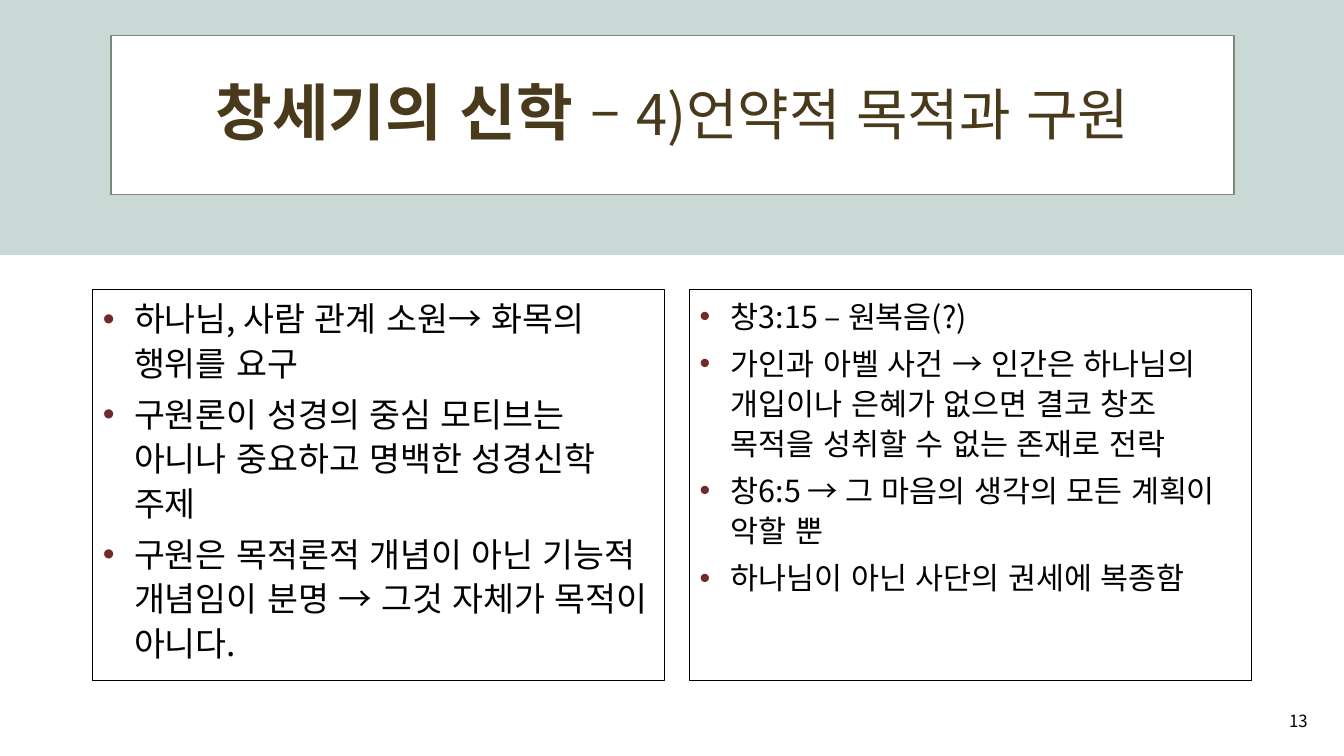
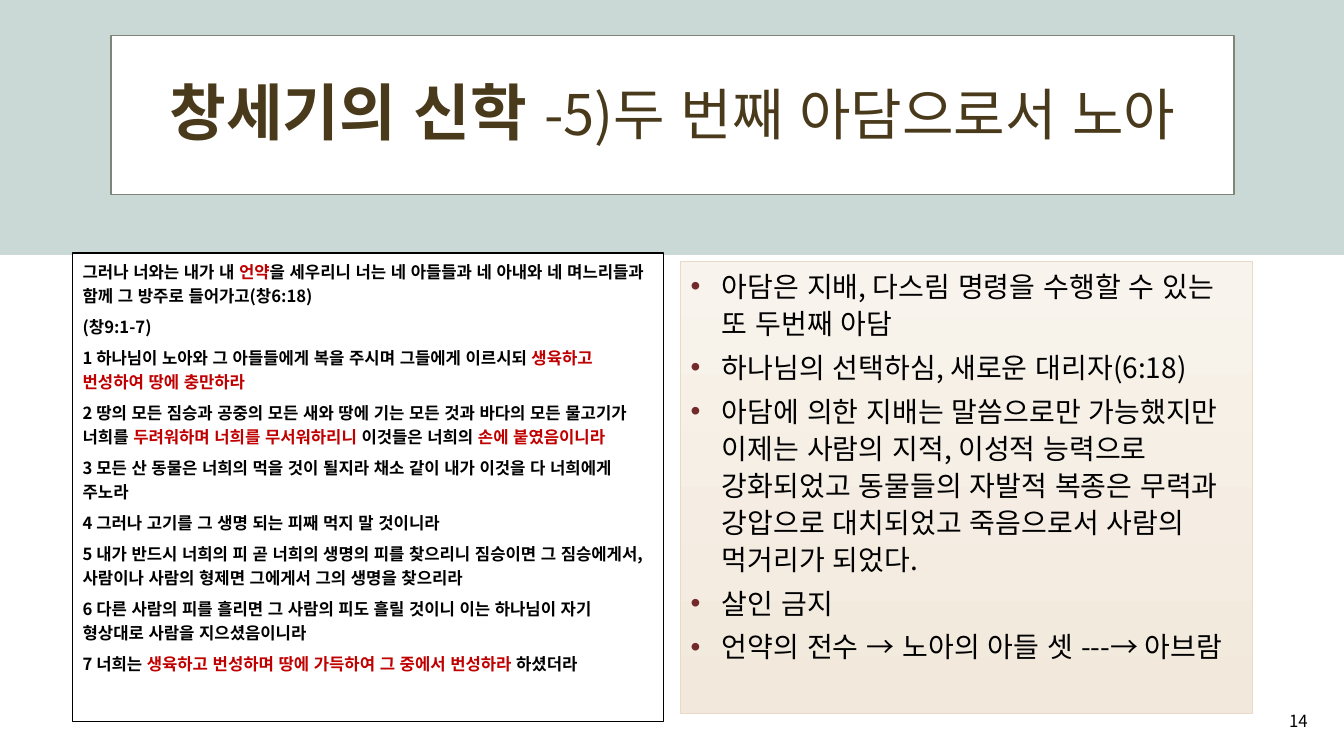
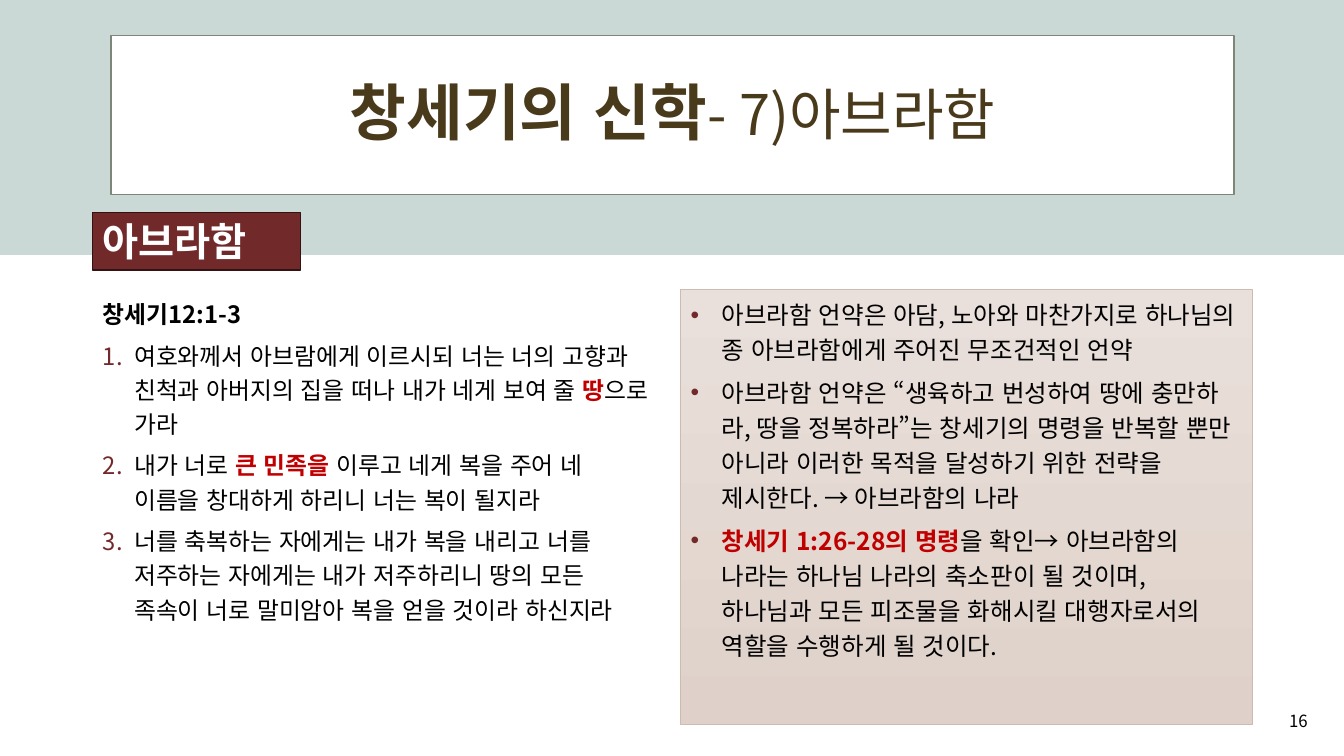
from dataclasses import dataclass, field

from lxml.etree import SubElement
from pptx import Presentation
from pptx.dml.color import RGBColor as Rgb
from pptx.enum.lang import MSO_LANGUAGE_ID as Lang
from pptx.enum.shapes import MSO_SHAPE as Kind
from pptx.enum.text import MSO_ANCHOR as Anchor, MSO_AUTO_SIZE as Fit, PP_ALIGN as Align
from pptx.oxml.ns import qn
from pptx.util import Inches, Pt


@dataclass(frozen=True)
class Theme:
    """Fonts, colours, type sizes and panel skins of the deck."""
    font: str = "Noto Sans CJK KR"
    latin: str = "Calibri"
    ink: str = "000000"
    white: str = "FFFFFF"
    brown: str = "4A3A1C"
    red: str = "C00000"
    wine: str = "72292A"
    mark: str = "73292A"
    edge: str = "321212"
    band: str = "CAD8D6"
    frame: str = "7E8679"
    head: float = 44
    sub: float = 40
    tag: float = 28
    page: float = 12
    skins: dict = field(default_factory=lambda: {
        "plain": (["FFFFFF"], "000000", 1),
        "sand": (["F8F3EC", "F2E9DC"], "E8DAC4", 0.5),
        "clay": (["E9E0DB", "DFD1C9"], "CEBBAF", 0.5),
    })


def apply(item, **opts):
    for name, value in opts.items():
        setattr(item, name, value)


class Deck:
    """Draws the elements of each slide in one style."""

    def __init__(self, theme):
        self.theme = theme
        self.prs = Presentation()
        apply(self.prs, slide_width=Inches(13.33), slide_height=Inches(7.5))
        self.plan = self.prs.slide_layouts[3]
        for old in list(self.plan.placeholders)[3:]:
            old.element.getparent().remove(old.element)
        self.slide = None

    def place(self, shape, at):
        names = ("left", "top", "width", "height")
        apply(shape, **{name: Inches(size) for name, size in zip(names, at)})

    def skin(self, shape, fills, edge=None, width=1):
        if len(fills) > 1:
            shape.fill.gradient()
            shape.fill.gradient_angle = 270
            for stop, tone in zip(shape.fill.gradient_stops, fills):
                stop.color.rgb = Rgb.from_string(tone)
        else:
            shape.fill.solid()
            shape.fill.fore_color.rgb = Rgb.from_string(fills[0])
        if edge:
            shape.line.color.rgb = Rgb.from_string(edge)
            shape.line.width = Pt(width)
        else:
            shape.line.fill.background()

    def rect(self, at, *skin):
        shape = self.slide.shapes.add_shape(Kind.RECTANGLE, *map(Inches, at))
        shape.shadow.inherit = False
        self.skin(shape, *skin)
        return shape

    def frame(self, shape, anchor):
        text = shape.text_frame
        apply(text, word_wrap=True, auto_size=Fit.NONE, vertical_anchor=anchor)
        return text

    def run(self, para, text, size, tone, bold=False, font=None):
        run = para.add_run()
        run.text = text
        apply(run.font, name=font or self.theme.font, size=Pt(size), bold=bold,
              language_id=Lang.KOREAN)
        run.font.color.rgb = Rgb.from_string(tone)
        SubElement(run.font._element, qn("a:ea"), typeface=self.theme.font)

    def bullet(self, para, mark):
        props = para._p.get_or_add_pPr()
        indent = Inches(0.31) if mark else 0
        props.set("marL", str(indent))
        props.set("indent", str(-indent))
        if not mark:
            SubElement(props, qn("a:buNone"))
            return
        tone = SubElement(props, qn("a:buClr"))
        SubElement(tone, qn("a:srgbClr"), val=self.theme.mark)
        if mark == "1.":
            SubElement(props, qn("a:buFont"), typeface=self.theme.font)
            SubElement(props, qn("a:buAutoNum"), type="arabicPeriod")
        else:
            SubElement(props, qn("a:buFont"), typeface="Arial")
            SubElement(props, qn("a:buChar"), char=mark)

    def start(self, head, sub, page):
        look = self.theme
        first = self.slide is None
        self.slide = self.prs.slides.add_slide(self.plan)
        if first:
            back = (self.rect((0, 0, 13.33, 2.53), [look.band]),
                    self.rect((1.1, 0.35, 11.14, 1.58), [look.white], look.frame))
            for spot, shape in enumerate(back, 2):
                self.plan.shapes.element.insert(spot, shape.element)
        title = self.slide.shapes.title
        self.place(title, (0.42, 0.42, 12.5, 1.45))
        para = self.frame(title, Anchor.MIDDLE).paragraphs[0]
        apply(para, alignment=Align.CENTER, line_spacing=0.9)
        self.run(para, head, look.head, look.brown, True)
        self.run(para, sub, look.sub, look.brown)
        self.number(page)

    def number(self, page):
        box = self.slide.shapes.add_textbox(*map(Inches, (10.07, 6.95, 3, 0.4)))
        para = self.frame(box, Anchor.MIDDLE).paragraphs[0]
        para.alignment = Align.RIGHT
        self.run(para, str(page), self.theme.page, self.theme.ink)

    def panel(self, slot, at, size, rows, skin=None, mark="•", heads=0, gap=1.1):
        shape = self.slide.placeholders[slot]
        self.place(shape, at)
        if skin:
            self.skin(shape, *self.theme.skins[skin])
        text = self.frame(shape, Anchor.TOP)
        for i, row in enumerate(rows):
            para = text.add_paragraph() if i else text.paragraphs[0]
            plain = i < heads
            self.bullet(para, None if plain else mark)
            apply(para, alignment=Align.LEFT, line_spacing=gap,
                  space_before=Pt(5 if i else 0), space_after=Pt(0))
            for j, part in enumerate(row.split("*")):
                if part:
                    tone = self.theme.red if j % 2 else self.theme.ink
                    self.run(para, part, size, tone, plain or j % 2 == 1)

    def tag(self, at, text):
        look = self.theme
        shape = self.rect(at, [look.wine], look.edge)
        para = self.frame(shape, Anchor.TOP).paragraphs[0]
        para.alignment = Align.LEFT
        self.run(para, text, look.tag, look.white, True, look.latin)


def main():
    deck = Deck(Theme())

    deck.start("창세기의 신학 ", "– 4)언약적 목적과 구원", 13)
    deck.panel(1, (0.92, 2.87, 5.67, 3.88), 24, [
        "하나님, 사람 관계 소원→ 화목의 행위를 요구",
        "구원론이 성경의 중심 모티브는 아니나 중요하고 명백한 성경신학 주제",
        "구원은 목적론적 개념이 아닌 기능적 개념임이 분명 → 그것 자체가 목적이 아니다.",
    ], "plain")
    deck.panel(2, (6.84, 2.87, 5.57, 3.88), 21.7, [
        "창3:15 – 원복음(?)",
        "가인과 아벨 사건 → 인간은 하나님의 개입이나 은혜가 없으면 결코 창조 목적을 "
        "성취할 수 없는 존재로 전락",
        "창6:5 → 그 마음의 생각의 모든 계획이 악할 뿐",
        "하나님이 아닌 사단의 권세에 복종함",
    ], "plain")

    deck.start("창세기의 신학 ", "-5)두 번째 아담으로서 노아", 14)
    verses = [
        "그러나 너와는 내가 내 *언약*을 세우리니 너는 네 아들들과 네 아내와 네 며느리들과 "
        "함께 그 방주로 들어가고(창6:18)",
        "(창9:1-7)",
        "1 하나님이 노아와 그 아들들에게 복을 주시며 그들에게 이르시되 "
        "*생육하고 번성하여 땅에 충만하라*",
        "2 땅의 모든 짐승과 공중의 모든 새와 땅에 기는 모든 것과 바다의 모든 물고기가 "
        "너희를 *두려워하며 너희를 무서워하리니 *이것들은 너희의 *손에 붙였음이니라*",
        "3 모든 산 동물은 너희의 먹을 것이 될지라 채소 같이 내가 이것을 다 너희에게 주노라",
        "4 그러나 고기를 그 생명 되는 피째 먹지 말 것이니라",
        "5 내가 반드시 너희의 피 곧 너희의 생명의 피를 찾으리니 짐승이면 그 짐승에게서, "
        "사람이나 사람의 형제면 그에게서 그의 생명을 찾으리라",
        "6 다른 사람의 피를 흘리면 그 사람의 피도 흘릴 것이니 이는 하나님이 "
        "자기 형상대로 사람을 지으셨음이니라",
        "7 너희는 *생육하고 번성하며 땅에 가득하여 그 중에서 번성하라 *하셨더라",
    ]
    deck.panel(1, (0.72, 2.51, 5.86, 4.65), 11.9, verses, "plain",
               heads=len(verses), gap=1.2)
    deck.panel(2, (6.75, 2.59, 5.67, 4.49), 20, [
        "아담은 지배, 다스림 명령을 수행할 수 있는 또 두번째 아담",
        "하나님의 선택하심, 새로운 대리자(6:18)",
        "아담에 의한 지배는 말씀으로만 가능했지만 이제는 사람의 지적, 이성적 능력으로 "
        "강화되었고 동물들의 자발적 복종은 무력과 강압으로 대치되었고 죽음으로서 사람의 "
        "먹거리가 되었다.",
        "살인 금지",
        "언약의 전수 → 노아의 아들 셋 ---→ 아브람",
    ], "sand")

    deck.start("창세기의 신학", "- 7)아브라함", 16)
    deck.panel(1, (0.92, 2.87, 5.67, 4.08), 17, [
        "창세기12:1-3",
        "여호와께서 아브람에게 이르시되 너는 너의 고향과 친척과 아버지의 집을 떠나 "
        "내가 네게 보여 줄 *땅*으로 가라",
        "내가 너로 *큰 민족을 *이루고 네게 복을 주어 네 이름을 창대하게 하리니 너는 복이 될지라",
        "너를 축복하는 자에게는 내가 복을 내리고 너를 저주하는 자에게는 내가 저주하리니 "
        "땅의 모든 족속이 너로 말미암아 복을 얻을 것이라 하신지라",
    ], mark="1.", heads=1, gap=1.2)
    deck.panel(2, (6.75, 2.87, 5.67, 4.32), 17.5, [
        "아브라함 언약은 아담, 노아와 마찬가지로 하나님의 종 아브라함에게 주어진 무조건적인 언약",
        "아브라함 언약은 “생육하고 번성하여 땅에 충만하라, 땅을 정복하라”는 창세기의 명령을 "
        "반복할 뿐만 아니라 이러한 목적을 달성하기 위한 전략을 제시한다. → 아브라함의 나라",
        "*창세기 1:26-28의 명령*을 확인→ 아브라함의 나라는 하나님 나라의 축소판이 될 것이며, "
        "하나님과 모든 피조물을 화해시킬 대행자로서의 역할을 수행하게 될 것이다.",
    ], "clay", gap=1.2)
    deck.tag((0.92, 2.11, 2.06, 0.57), "아브라함")

    deck.prs.save("out.pptx")


if __name__ == "__main__":
    main()
